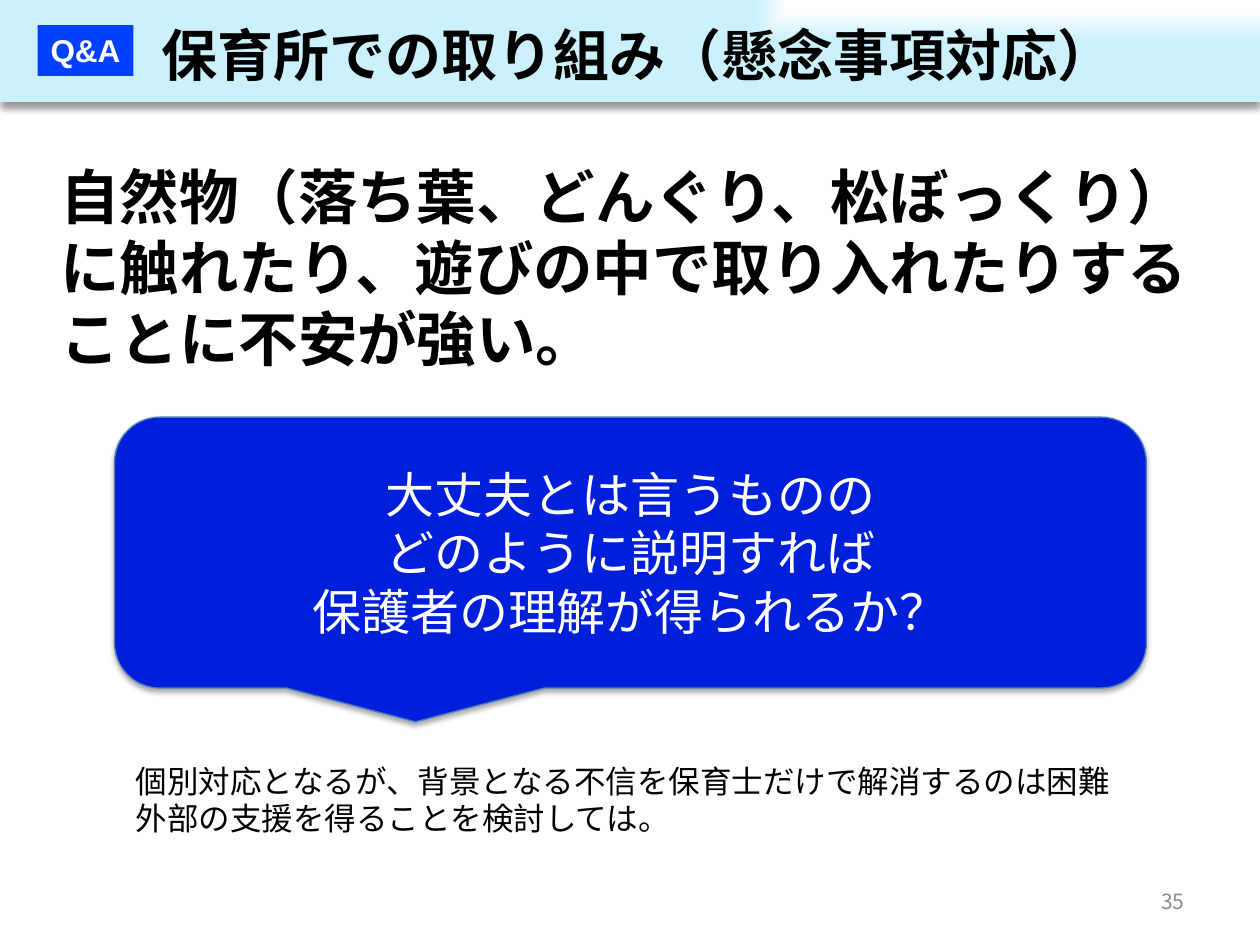
import pptx
import pptx.util
import pptx.oxml
import pptx.oxml.ns
from pptx.dml.color import RGBColor
from pptx.enum.shapes import MSO_SHAPE
from pptx.enum.text import MSO_ANCHOR, MSO_AUTO_SIZE, PP_ALIGN
from pptx.util import Cm

BLACK = RGBColor(0x00, 0x00, 0x00)
WHITE = RGBColor(0xFF, 0xFF, 0xFF)
GRAY = RGBColor(0x8C, 0x8C, 0x8C)
PALE_BLUE = RGBColor(0xCA, 0xF1, 0xFC)
LABEL_BLUE = RGBColor(0x00, 0x41, 0xFF)
CALLOUT_BLUE = RGBColor(0x00, 0x1F, 0xDA)
EDGE_BLUE = RGBColor(0x4B, 0x7E, 0xBC)

JAPANESE = "Noto Sans CJK JP"
LATIN = "Arial"
LINE_HEIGHT = 1.19  # line pitch relative to the text size


def write_text(shape, lines, size, color, font=JAPANESE, bold=False,
               align=PP_ALIGN.LEFT, anchor=MSO_ANCHOR.TOP, wrap=True):
    """Fill a shape with one paragraph per line, all in one style."""
    frame = shape.text_frame
    frame.word_wrap = wrap
    frame.vertical_anchor = anchor
    frame.auto_size = MSO_AUTO_SIZE.NONE if wrap else MSO_AUTO_SIZE.SHAPE_TO_FIT_TEXT
    frame.text = "\n".join(lines)
    for para in frame.paragraphs:
        para.alignment = align
        para.line_spacing = pptx.util.Pt(round(size * LINE_HEIGHT, 1))
        for target in [para] + list(para.runs):
            target.font.size = pptx.util.Pt(size)
            target.font.bold = bold
            target.font.color.rgb = color
            target.font.name = font
        for span in para.runs:
            east_asian = pptx.oxml.parse_xml(
                f'<a:ea {pptx.oxml.ns.nsdecls("a")} typeface="{JAPANESE}"/>')
            span.font._element.find(pptx.oxml.ns.qn("a:latin")).addnext(east_asian)


def add_text(page, area, lines, size, color, **style):
    box = page.shapes.add_textbox(*map(Cm, area))
    write_text(box, lines, size, color, **style)


def add_block(page, kind, area, fill, edge=None):
    """Add a filled shape without shadow, outlined only when edge is given."""
    block = page.shapes.add_shape(kind, *map(Cm, area))
    block.shadow.inherit = False
    block.fill.solid()
    block.fill.fore_color.rgb = fill
    if edge is None:
        block.line.fill.background()
    else:
        block.line.color.rgb = edge
        block.line.width = pptx.util.Pt(0.75)
    return block


def drop_shadow(shape, blur, distance, opacity):
    effects = shape._element.spPr.find(pptx.oxml.ns.qn("a:effectLst"))
    effects.append(pptx.oxml.parse_xml(
        f'<a:outerShdw {pptx.oxml.ns.nsdecls("a")} blurRad="{pptx.util.Pt(blur)}" '
        f'dist="{pptx.util.Pt(distance)}" dir="5400000" rotWithShape="0">'
        f'<a:srgbClr val="{BLACK}"><a:alpha val="{opacity * 1000}"/></a:srgbClr>'
        '</a:outerShdw>'))


def corner_gradient(shape, inner, outer):
    """Shade the shape from its top right corner outwards."""
    properties = shape._element.spPr
    solid = properties.find(pptx.oxml.ns.qn("a:solidFill"))
    properties.replace(solid, pptx.oxml.parse_xml(
        f'<a:gradFill {pptx.oxml.ns.nsdecls("a")} rotWithShape="1"><a:gsLst>'
        f'<a:gs pos="20000"><a:srgbClr val="{inner}"/></a:gs>'
        f'<a:gs pos="80000"><a:srgbClr val="{outer}"/></a:gs></a:gsLst>'
        '<a:path path="rect"><a:fillToRect l="100000" b="100000"/></a:path>'
        '</a:gradFill>'))


def main():
    deck = pptx.Presentation()
    deck.slide_width, deck.slide_height = Cm(25.4), Cm(19.05)
    page = deck.slides.add_slide(deck.slide_layouts[6])

    # Header band
    band = add_block(page, MSO_SHAPE.RECTANGLE, (0, 0, 25.4, 2.06), PALE_BLUE)
    corner_gradient(band, WHITE, PALE_BLUE)
    drop_shadow(band, blur=4, distance=3, opacity=40)

    # Concern raised
    add_text(page, (0.97, 3.33, 23.42, 4.09),
             ["自然物（落ち葉、どんぐり、松ぼっくり）\v"
              "に触れたり、遊びの中で取り入れたりする\v"
              "ことに不安が強い。"],
             34, BLACK, bold=True, anchor=MSO_ANCHOR.MIDDLE)

    # Page number
    add_text(page, (18.21, 17.65, 5.92, 1.02), ["35"], 12, GRAY,
             align=PP_ALIGN.RIGHT, anchor=MSO_ANCHOR.MIDDLE)

    # Label
    label = add_block(page, MSO_SHAPE.RECTANGLE, (0.76, 0.51, 1.93, 1.02), LABEL_BLUE)
    write_text(label, ["Q&A"], 18, WHITE, font=LATIN, bold=True,
               align=PP_ALIGN.CENTER, wrap=False)

    # Question callout
    callout = add_block(page, MSO_SHAPE.ROUNDED_RECTANGULAR_CALLOUT,
                        (2.31, 8.41, 20.8, 5.46), CALLOUT_BLUE, EDGE_BLUE)
    drop_shadow(callout, blur=3.1, distance=1.8, opacity=35)
    write_text(callout,
               ["大丈夫とは言うものの", "どのように説明すれば", "保護者の理解が得られるか？"],
               28, WHITE, align=PP_ALIGN.CENTER, anchor=MSO_ANCHOR.MIDDLE)

    # Advice
    add_text(page, (2.49, 15.24, 20.4, 1.8),
             ["個別対応となるが、背景となる不信を保育士だけで解消するのは困難",
              "外部の支援を得ることを検討しては。"],
             18, BLACK, wrap=False)

    # Heading
    add_text(page, (3, 0.3, 19.89, 1.63), ["保育所での取り組み（懸念事項対応）"],
             32, BLACK, font=LATIN, bold=True, wrap=False)

    deck.save("out.pptx")


if __name__ == "__main__":
    main()
